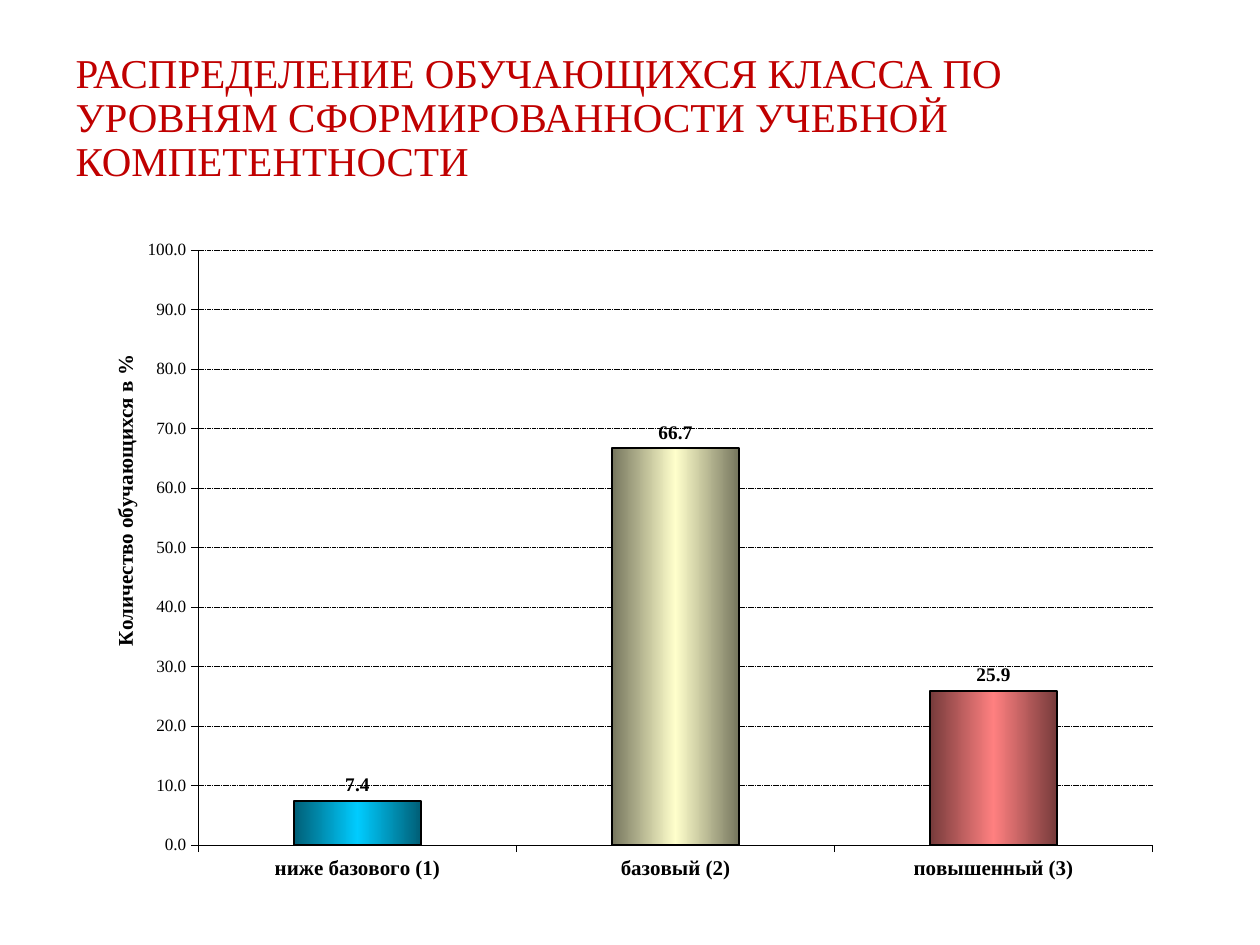
"""Build a slide with a column chart of pupils by level of learning competence."""
from lxml.etree import SubElement
from pptx import Presentation
from pptx.chart.data import CategoryChartData
from pptx.dml.color import RGBColor
from pptx.enum.chart import XL_CHART_TYPE, XL_LABEL_POSITION, XL_TICK_MARK
from pptx.enum.dml import MSO_LINE
from pptx.enum.text import MSO_ANCHOR, PP_ALIGN
from pptx.oxml import parse_xml
from pptx.oxml.ns import nsdecls, qn
from pptx.util import Cm, Pt


def style(font, size, bold=False, color="000000"):
    font.name = "Times New Roman"
    font.size = Pt(size)
    font.bold = bold
    font.color.rgb = RGBColor.from_string(color)


def paint(form, color):
    form.fill.gradient()
    form.fill.gradient_angle = 0
    stops = form.fill._fill._gradFill.find(qn("a:gsLst"))
    for stop in list(stops):
        stops.remove(stop)
    for pos in (0, 50, 100):
        stop = SubElement(stops, qn("a:gs"), pos=str(pos * 1000))
        tone = SubElement(stop, qn("a:srgbClr"), val=color)
        if pos != 50:
            SubElement(tone, qn("a:gamma"))
            SubElement(tone, qn("a:shade"), val="46275")
            SubElement(tone, qn("a:invGamma"))
    form.line.color.rgb = RGBColor.from_string("000000")
    form.line.width = Pt(1)


deck = Presentation()
deck.slide_width = Cm(25.4)
deck.slide_height = Cm(19.05)
slide = deck.slides.add_slide(deck.slide_layouts[5])

title = slide.shapes.title
title.left, title.top = Cm(1.27), Cm(0.9)
title.width, title.height = Cm(22.23), Cm(3)
frame = title.text_frame
frame.word_wrap = True
frame.vertical_anchor = MSO_ANCHOR.MIDDLE
para = frame.paragraphs[0]
para.alignment = PP_ALIGN.LEFT
para.line_spacing = 0.9
run = para.add_run()
run.text = ("РАСПРЕДЕЛЕНИЕ ОБУЧАЮЩИХСЯ КЛАССА ПО УРОВНЯМ "
            "СФОРМИРОВАННОСТИ УЧЕБНОЙ КОМПЕТЕНТНОСТИ")
style(run.font, 23.4, color="C00000")

data = CategoryChartData(number_format="0.0")
data.categories = ["ниже базового (1)", "базовый (2)", "повышенный (3)"]
data.add_series("Series 1", [7.4, 66.7, 25.9])
chart = slide.shapes.add_chart(
    XL_CHART_TYPE.COLUMN_CLUSTERED, 0, 0, Cm(25.99), Cm(20.57), data).chart
chart.has_legend = False
chart.has_title = False
style(chart.font, 12)

cats, vals = chart.category_axis, chart.value_axis
style(cats.tick_labels.font, 12, True)
style(vals.tick_labels.font, 9.8)
vals.tick_labels.number_format = "0.0"
vals.tick_labels.number_format_is_linked = False
vals.minimum_scale, vals.maximum_scale = 0, 100
vals.major_unit = 10
vals.has_major_gridlines = True
grid = vals.major_gridlines.format.line
for line in (cats.format.line, vals.format.line, grid):
    line.color.rgb = RGBColor.from_string("000000")
    line.width = Pt(0.25)
grid.dash_style = MSO_LINE.SQUARE_DOT
for axis in (cats, vals):
    axis.major_tick_mark = XL_TICK_MARK.OUTSIDE
    axis.minor_tick_mark = XL_TICK_MARK.NONE

label = vals.axis_title.text_frame.paragraphs[0].add_run()
label.text = "Количество обучающихся в %"
style(label.font, 12, True)

plot = chart.plots[0]
plot.gap_width = 150
plot.vary_by_categories = False
bars = plot.series[0]
paint(bars.format, "00CCFF")
paint(bars.points[1].format, "FFFFCC")
paint(bars.points[2].format, "FF8080")
tags = bars.data_labels
tags.show_value = True
tags.number_format = "0.0"
tags.number_format_is_linked = False
tags.position = XL_LABEL_POSITION.OUTSIDE_END
style(tags.font, 11, True)

area = chart._chartSpace.chart.plotArea
for old in area.findall(qn("c:layout")):
    area.remove(old)
area.insert(0, parse_xml(
    f'<c:layout {nsdecls("c")}><c:manualLayout><c:layoutTarget val="inner"/>'
    '<c:xMode val="edge"/><c:yMode val="edge"/><c:x val="0.154"/>'
    '<c:y val="0.245"/><c:w val="0.74"/><c:h val="0.583"/>'
    '</c:manualLayout></c:layout>'))
head = vals.axis_title._element
for old in head.findall(qn("c:layout")):
    head.remove(old)
head.find(qn("c:tx")).addnext(parse_xml(
    f'<c:layout {nsdecls("c")}><c:manualLayout><c:xMode val="edge"/>'
    '<c:yMode val="edge"/><c:x val="0.084"/><c:y val="0.344"/>'
    '</c:manualLayout></c:layout>'))
body = head.find(qn("c:tx")).find(qn("c:rich")).find(qn("a:bodyPr"))
body.set("rot", "-5400000")
body.set("vert", "horz")

deck.save("out.pptx")
